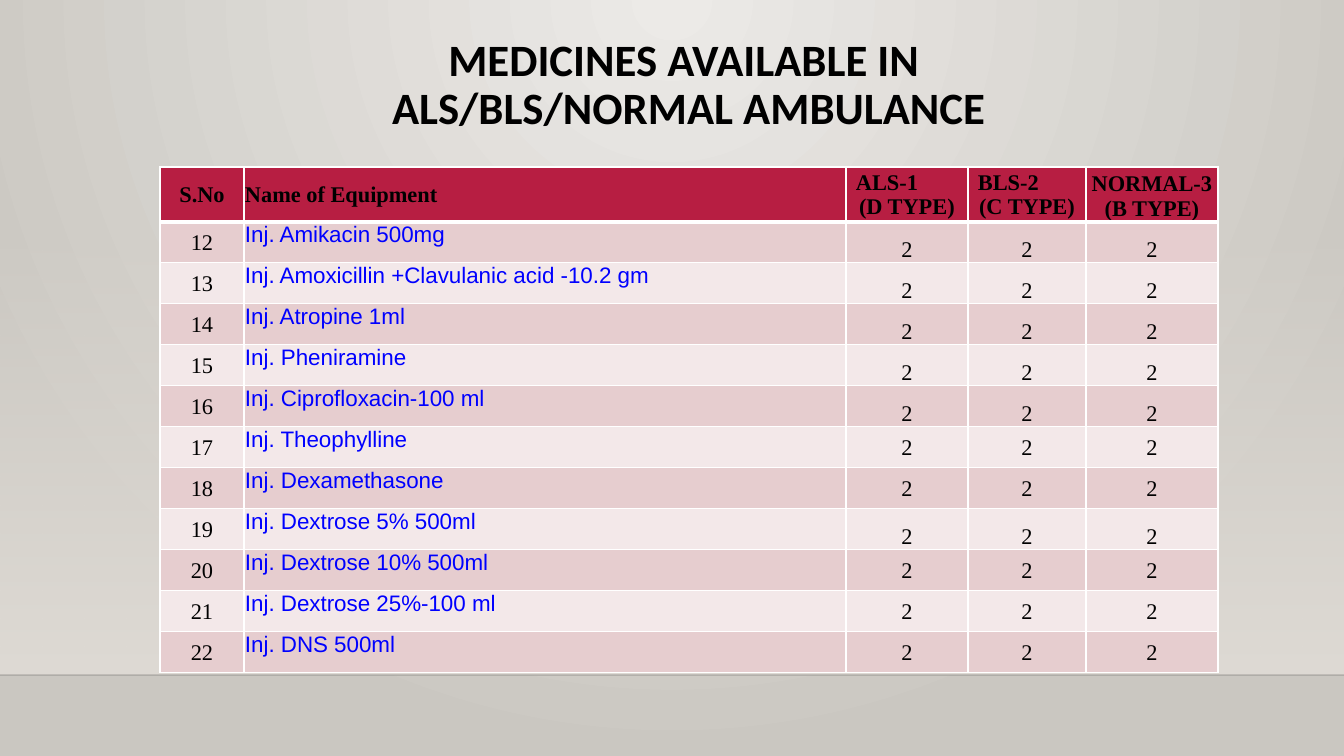
from dataclasses import dataclass

from lxml import etree
from pptx import Presentation
from pptx.dml.color import RGBColor
from pptx.enum.shapes import MSO_CONNECTOR, MSO_SHAPE
from pptx.enum.text import MSO_ANCHOR, PP_ALIGN
from pptx.oxml.ns import qn
from pptx.util import Emu, Pt

TOP, MIDDLE, BOTTOM = MSO_ANCHOR.TOP, MSO_ANCHOR.MIDDLE, MSO_ANCHOR.BOTTOM
LEFT, CENTER = PP_ALIGN.LEFT, PP_ALIGN.CENTER
STRAIGHT, RECTANGLE = MSO_CONNECTOR.STRAIGHT, MSO_SHAPE.RECTANGLE


@dataclass(frozen=True)
class Theme:
    glow: str = "ECEAE7"
    edge: str = "CAC7C1"
    wall: str = "DFDBD5"
    floor_line: str = "000001"
    header: str = "B71E42"
    bands: tuple = ("E6CDCF", "F3E8E9")
    border: str = "FFFFFF"
    text: str = "000000"
    medicine: str = "0000FF"
    title_font: str = "Calibri"
    table_font: str = "Times New Roman"
    medicine_font: str = "Arial"
    title_size: int = 32
    table_size: int = 16


THEME = Theme()


def px(length):
    return Emu(round(length * 914400 / 100.8))


def fill_cell(cell, lines, fill, anchor, align, font, color, bold=False, bottom_line=1):
    cell.margin_left = cell.margin_right = cell.margin_top = px(1)
    cell.margin_bottom = 0
    cell.vertical_anchor = anchor
    cell.text = lines
    for paragraph in cell.text_frame.paragraphs:
        paragraph.alignment = align
        paragraph.font.name = font
        paragraph.font.size = Pt(THEME.table_size)
        paragraph.font.bold = bold
        paragraph.font.color.rgb = RGBColor.from_string(color)
    properties = cell._tc.get_or_add_tcPr()
    for side, points in (("L", 1), ("R", 1), ("T", 1), ("B", bottom_line)):
        edge = etree.SubElement(properties, qn(f"a:ln{side}"), w=str(Pt(points)))
        solid = etree.SubElement(edge, qn("a:solidFill"))
        etree.SubElement(solid, qn("a:srgbClr"), val=THEME.border)
    cell.fill.solid()
    cell.fill.fore_color.rgb = RGBColor.from_string(fill)


deck = Presentation()
deck.slide_width, deck.slide_height = px(1344), px(756)
slide = deck.slides.add_slide(deck.slide_layouts[6])

backdrop = slide.background.fill
backdrop.gradient()
for stop, color in zip(backdrop.gradient_stops, (THEME.glow, THEME.edge)):
    stop.color.rgb = RGBColor.from_string(color)
gradient = slide._element.find(".//" + qn("a:gradFill"))
gradient.remove(gradient.find(qn("a:lin")))
circle = etree.SubElement(gradient, qn("a:path"), path="circle")
etree.SubElement(circle, qn("a:fillToRect"), l="43000", t="0", r="43000", b="100000")

wall = slide.shapes.add_shape(RECTANGLE, 0, px(223), px(1344), px(452))
wall.shadow.inherit = False
wall.line.fill.background()
wall.fill.gradient()
wall.fill.gradient_angle = 270
for stop in wall.fill.gradient_stops:
    stop.color.rgb = RGBColor.from_string(THEME.wall)
wall_top = wall._element.spPr.find(".//" + qn("a:srgbClr"))
etree.SubElement(wall_top, qn("a:alpha"), val="0")

floor_line = slide.shapes.add_connector(STRAIGHT, 0, px(675), px(1344), px(675))
floor_line.line.width = Pt(1)
floor_line.line.color.rgb = RGBColor.from_string(THEME.floor_line)
floor_properties = floor_line._element.spPr
etree.SubElement(floor_properties.find(".//" + qn("a:srgbClr")), qn("a:alpha"), val="20000")
etree.SubElement(floor_properties, qn("a:effectLst"))

title = slide.shapes.add_textbox(px(160), px(28), px(1058), px(116)).text_frame
title.word_wrap = True
title.vertical_anchor = MIDDLE
heading = title.paragraphs[0]
heading.text = "MEDICINES AVAILABLE IN \vALS/BLS/NORMAL AMBULANCE"
heading.alignment = CENTER
heading.line_spacing = 0.9
heading.font.name = THEME.title_font
heading.font.size = Pt(THEME.title_size)
heading.font.bold = True
heading.font.color.rgb = RGBColor.from_string(THEME.text)

headers = [
    ("S.No", MIDDLE, CENTER),
    ("Name of Equipment", MIDDLE, LEFT),
    ("ALS-1\n(D TYPE)", MIDDLE, CENTER),
    ("BLS-2\n(C TYPE)", MIDDLE, CENTER),
    ("NORMAL-3\n(B TYPE)", BOTTOM, CENTER),
]
medicines = [
    ("Inj. Amikacin 500mg", BOTTOM),
    ("Inj. Amoxicillin +Clavulanic acid -10.2 gm", BOTTOM),
    ("Inj. Atropine 1ml", BOTTOM),
    ("Inj. Pheniramine", BOTTOM),
    ("Inj. Ciprofloxacin-100 ml", BOTTOM),
    ("Inj. Theophylline", MIDDLE),
    ("Inj. Dexamethasone", MIDDLE),
    ("Inj. Dextrose 5% 500ml", BOTTOM),
    ("Inj. Dextrose 10% 500ml", MIDDLE),
    ("Inj. Dextrose 25%-100 ml", MIDDLE),
    ("Inj. DNS 500ml", MIDDLE),
]
FIRST_NUMBER = 12
QUANTITY = "2"
HEADER_HEIGHT, ROW_HEIGHT = 50, 41

stock = slide.shapes.add_table(
    len(medicines) + 1, len(headers), px(160), px(167), px(1058),
    px(HEADER_HEIGHT + ROW_HEIGHT * len(medicines)),
).table
stock.horz_banding = False
for column, width in zip(stock.columns, (84, 602, 122, 118, 132)):
    column.width = px(width)
for index, row in enumerate(stock.rows):
    row.height = px(ROW_HEIGHT if index else HEADER_HEIGHT)

for column, (label, anchor, align) in enumerate(headers):
    fill_cell(stock.cell(0, column), label, THEME.header, anchor, align,
              THEME.table_font, THEME.text, bold=True, bottom_line=3)
for column in (2, 3):
    ambulance = stock.cell(0, column).text_frame.paragraphs[0]
    ambulance.alignment = LEFT
    ambulance._p.get_or_add_pPr().set("marL", str(px(9)))

for index, (medicine, quantity_anchor) in enumerate(medicines):
    row = index + 1
    band = THEME.bands[index % 2]
    fill_cell(stock.cell(row, 0), str(FIRST_NUMBER + index), band, MIDDLE, CENTER,
              THEME.table_font, THEME.text)
    fill_cell(stock.cell(row, 1), medicine, band, TOP, LEFT,
              THEME.medicine_font, THEME.medicine)
    for column in (2, 3, 4):
        fill_cell(stock.cell(row, column), QUANTITY, band, quantity_anchor, CENTER,
                  THEME.table_font, THEME.text)

deck.save("out.pptx")
